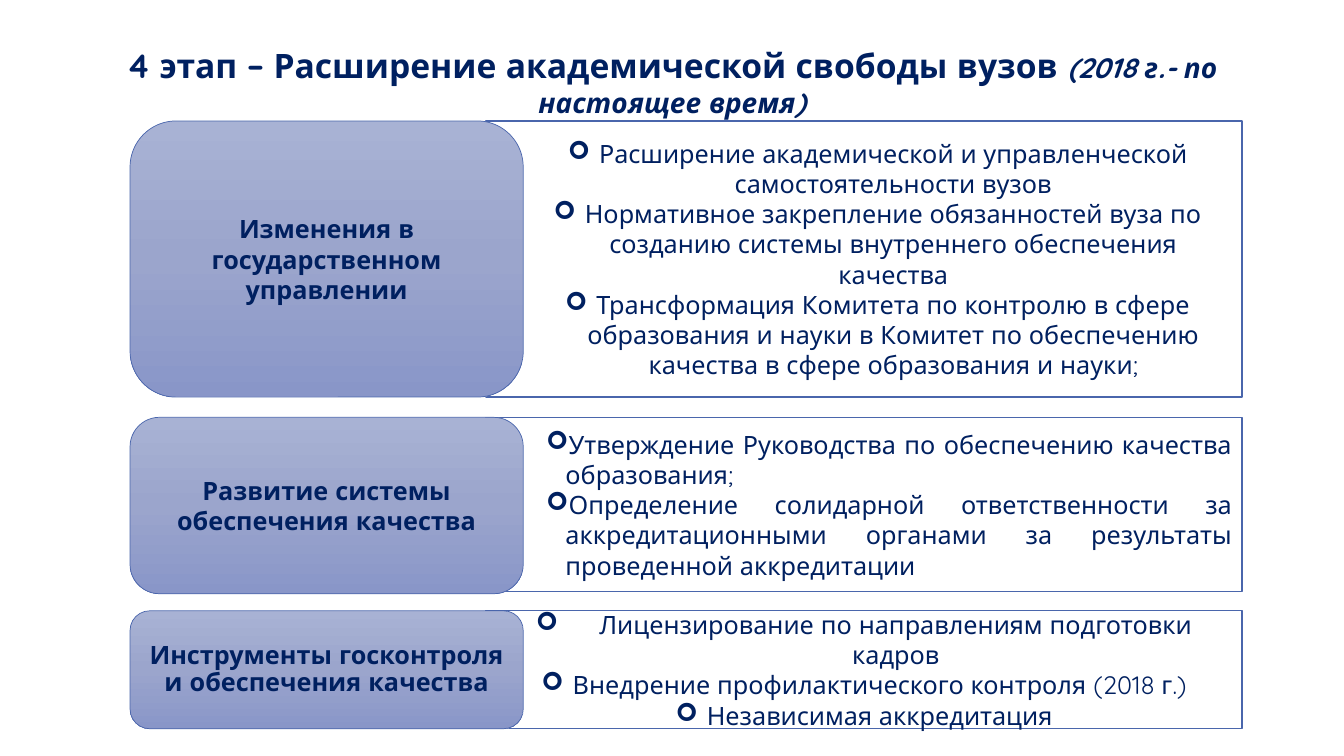
"""Builds the slide on stage 4, the widening of academic freedom of universities."""
from copy import deepcopy

from pptx import Presentation
from pptx.dml.color import RGBColor
from pptx.enum.shapes import MSO_SHAPE
from pptx.enum.text import MSO_ANCHOR, PP_ALIGN
from pptx.oxml.ns import qn
from pptx.util import Pt
from lxml import etree

PX = 9144
NAVY = RGBColor(0x00, 0x20, 0x60)
BLUE = RGBColor(0x4A, 0x66, 0xAC)
WHITE = RGBColor(0xFF, 0xFF, 0xFF)
GRADIENT = [
    (0, RGBColor(0xA8, 0xB2, 0xD4)),
    (0.5, RGBColor(0x9B, 0xA5, 0xCC)),
    (1, RGBColor(0x89, 0x96, 0xC8)),
]
FONT = "Quicksand"
CENTER, JUSTIFY = PP_ALIGN.CENTER, PP_ALIGN.JUSTIFY
MIDDLE = MSO_ANCHOR.MIDDLE
RECTANGLE, ROUNDED = MSO_SHAPE.RECTANGLE, MSO_SHAPE.ROUNDED_RECTANGLE

LABEL_LEFT, LABEL_WIDTH = 129, 390
DETAIL_LEFT, DETAIL_WIDTH = 482, 750

# Each detail: left margin, hanging indent, text
STAGES = [
    (120, 274, 274, 1, "Изменения в государственном управлении", CENTER, [
        (58, 31, "Расширение академической и управленческой самостоятельности вузов"),
        (58, 31, "Нормативное закрепление обязанностей вуза по созданию системы "
                 "внутреннего обеспечения качества"),
        (58, 31, "Трансформация Комитета по контролю в сфере образования и науки "
                 "в Комитет по обеспечению качества в сфере образования и науки;"),
    ]),
    (414, 173, 175, 1, "Развитие системы обеспечения качества", JUSTIFY, [
        (69, 19, "Утверждение Руководства по обеспечению качества образования;"),
        (69, 19, "Определение солидарной ответственности за аккредитационными "
                 "органами за результаты проведенной аккредитации"),
    ]),
    (606, 117, 117, 0.9, "Инструменты госконтроля и обеспечения качества", CENTER, [
        (63, 63, "Лицензирование по направлениям подготовки кадров"),
        (31, 31, "Внедрение профилактического контроля (2018 г.)"),
        (31, 31, "Независимая аккредитация"),
    ]),
]


def add_panel(kind, left, top, width, height, line_width):
    panel = page.shapes.add_shape(kind, left * PX, top * PX, width * PX, height * PX)
    panel.shadow.inherit = False
    panel.line.color.rgb = BLUE
    panel.line.width = Pt(line_width)
    panel.text_frame.word_wrap = True
    panel.text_frame.vertical_anchor = MIDDLE
    return panel


def set_font(font, size, bold=False):
    font.name = FONT
    font.size = Pt(size)
    font.bold = bold
    font.color.rgb = NAVY


deck = Presentation()
deck.slide_width, deck.slide_height = 1333 * PX, 750 * PX
page = deck.slides.add_slide(deck.slide_layouts[6])

for top, detail_height, label_height, spacing, label_text, alignment, details in STAGES:
    detail = add_panel(RECTANGLE, DETAIL_LEFT, top, DETAIL_WIDTH, detail_height, 1)
    detail.fill.solid()
    detail.fill.fore_color.rgb = WHITE
    frame = detail.text_frame
    for index, (margin, hanging, text) in enumerate(details):
        para = frame.add_paragraph() if index else frame.paragraphs[0]
        para.text = text
        para.alignment = alignment
        properties = para._p.get_or_add_pPr()
        properties.set("marL", str(margin * PX))
        properties.set("indent", str(-hanging * PX))
        etree.SubElement(properties, qn("a:buFont"), typeface="Wingdings")
        etree.SubElement(properties, qn("a:buChar"), char="➢")
        set_font(para.font, 18)

    label = add_panel(ROUNDED, LABEL_LEFT, top, LABEL_WIDTH, label_height, 0.5)
    label.fill.gradient()
    label.fill.gradient_angle = 270
    stop_list = label._element.spPr.find(qn("a:gradFill")).find(qn("a:gsLst"))
    stop_list.insert(1, deepcopy(stop_list[0]))
    for stop, (position, color) in zip(label.fill.gradient_stops, GRADIENT):
        stop.position = position
        stop.color.rgb = color
    para = label.text_frame.paragraphs[0]
    para.text = label_text
    para.alignment = CENTER
    para.line_spacing = spacing
    set_font(para.font, 18, True)

title = page.shapes.add_textbox(83 * PX, 40 * PX, 1167 * PX, 84 * PX)
title.text_frame.word_wrap = True
para = title.text_frame.paragraphs[0]
para.alignment = CENTER
for text, size, italic in [
    ("4 этап – Расширение академической свободы вузов ", 24, False),
    ("(2018 г.- по настоящее время)", 20, True),
]:
    span = para.add_run()
    span.text = text
    set_font(span.font, size, True)
    span.font.italic = italic

deck.save("out.pptx")
